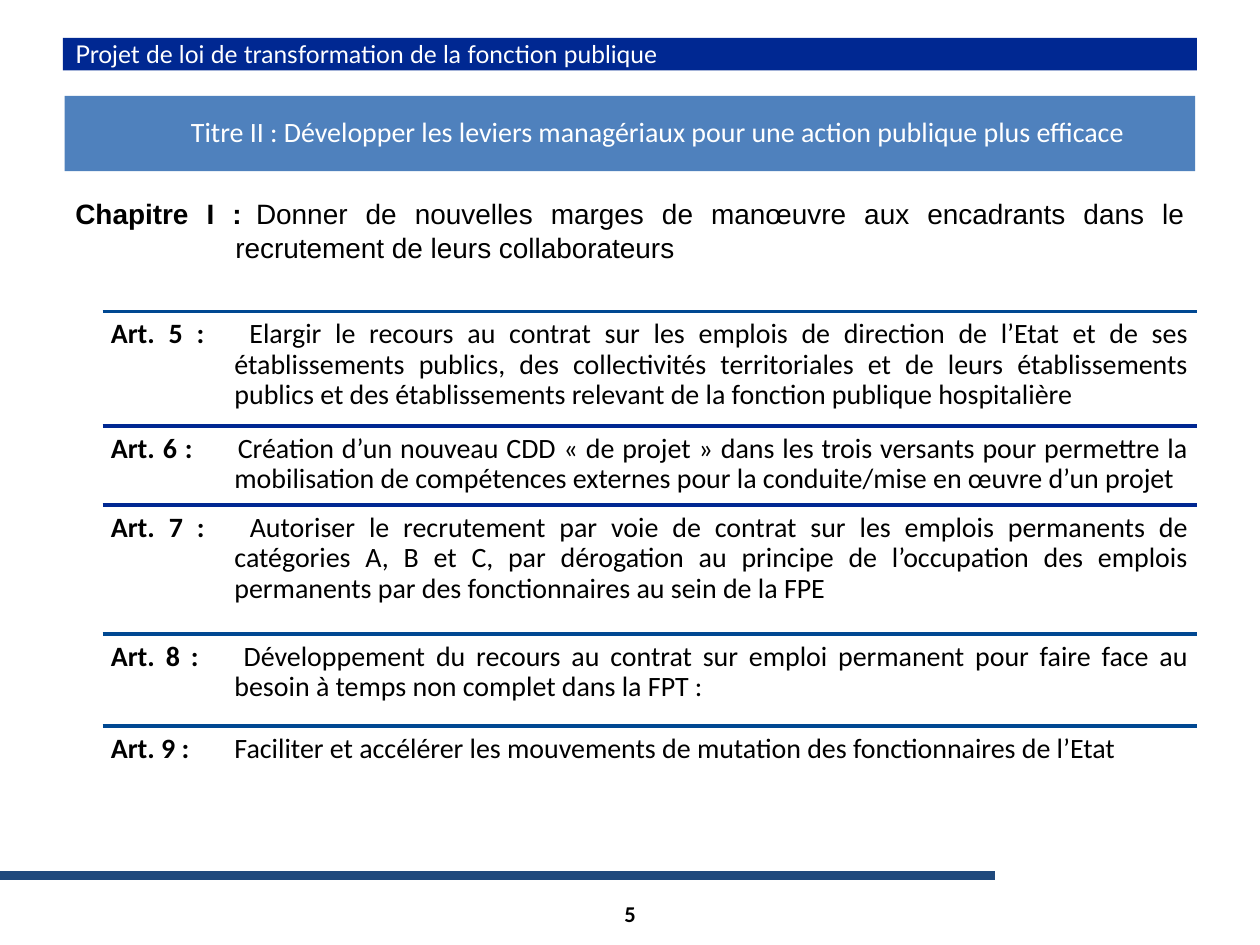
from lxml import etree
from pptx import Presentation
from pptx.dml.color import RGBColor
from pptx.enum.shapes import MSO_CONNECTOR, MSO_SHAPE
from pptx.enum.text import MSO_ANCHOR, PP_ALIGN
from pptx.oxml.ns import qn
from pptx.util import Pt

RECT = MSO_SHAPE.RECTANGLE
LINE = MSO_CONNECTOR.STRAIGHT
TOP, MIDDLE = MSO_ANCHOR.TOP, MSO_ANCHOR.MIDDLE
LEFT, CENTER, JUST = PP_ALIGN.LEFT, PP_ALIGN.CENTER, PP_ALIGN.JUSTIFY

COLORS = {"navy": "002892", "blue": "004892", "steel": "4F81BD",
          "foot": "1F497D", "white": "FFFFFF", "black": "000000"}

# Label, text, rule colour, row height
ARTICLES = [
    ("Art. 5 :", "Elargir le recours au contrat sur les emplois de direction de l’Etat "
     "et de ses établissements publics, des collectivités territoriales et de leurs "
     "établissements publics et des établissements relevant de la fonction publique "
     "hospitalière", "blue", 65.3),
    ("Art. 6 :", "Création d’un nouveau CDD « de projet » dans les trois versants pour "
     "permettre la mobilisation de compétences externes pour la conduite/mise en œuvre "
     "d’un projet", "navy", 45.4),
    ("Art. 7 :", "Autoriser le recrutement par voie de contrat sur les emplois "
     "permanents de catégories A, B et C, par dérogation au principe de l’occupation "
     "des emplois permanents par des fonctionnaires au sein de la FPE", "navy", 73.5),
    ("Art. 8 :", "Développement du recours au contrat sur emploi permanent pour faire "
     "face au besoin à temps non complet dans la FPT :", "blue", 52.6),
    ("Art. 9 :", "Faciliter et accélérer les mouvements de mutation des fonctionnaires "
     "de l’Etat", "blue", 52.6),
]


def rgb(name):
    return RGBColor.from_string(COLORS[name])


def apply(target, values):
    for name, value in values.items():
        setattr(target, name, value)


def write(shape, parts, size, font, color="black", align=LEFT, anchor=MIDDLE,
          pads=(7.2, 3.6, 7.2, 3.6), hang=0, space=1.0):
    """Fill a shape with one paragraph of (text, bold) parts."""
    frame = shape.text_frame
    sides = ("margin_left", "margin_top", "margin_right", "margin_bottom")
    apply(frame, {side: Pt(pad) for side, pad in zip(sides, pads)})
    apply(frame, {"word_wrap": True, "vertical_anchor": anchor})
    para = frame.paragraphs[0]
    if hang:
        props = para._p.get_or_add_pPr()
        props.set("marL", str(Pt(hang)))
        props.set("indent", str(Pt(-hang)))
        tabs = etree.SubElement(props, qn("a:tabLst"))
        etree.SubElement(tabs, qn("a:tab"), pos=str(Pt(hang)), algn="l")
    apply(para, {"alignment": align, "line_spacing": space})
    for text, bold in parts:
        run = para.add_run()
        run.text = text
        apply(run.font, {"size": Pt(size), "name": font, "bold": bold})
        run.font.color.rgb = rgb(color)


def add_text(slide, x, y, w, h, parts, size, font, **style):
    box = slide.shapes.add_textbox(Pt(x), Pt(y), Pt(w), Pt(h))
    write(box, parts, size, font, **style)


def add_rule(slide, x, y, w, color, width):
    rule = slide.shapes.add_connector(LINE, Pt(x), Pt(y), Pt(x + w), Pt(y))
    rule.line.color.rgb = rgb(color)
    rule.line.width = Pt(width)
    etree.SubElement(rule._element.spPr, qn("a:effectLst"))


def add_bar(slide, x, y, w, h, fill, text, size, font, **style):
    bar = slide.shapes.add_shape(RECT, Pt(x), Pt(y), Pt(w), Pt(h))
    bar.shadow.inherit = False
    bar.fill.solid()
    bar.fill.fore_color.rgb = rgb(fill)
    bar.line.fill.background()
    write(bar, [(text, False)], size, font, color="white", **style)


def add_header(slide, x, y, w):
    add_bar(slide, x, y, w, 18.7, "navy",
            "Projet de loi de transformation de la fonction publique", 14, "Lato")
    add_bar(slide, x + 1, y + 33.2, w - 2, 43, "steel",
            "Titre II : Développer les leviers managériaux pour une action publique "
            "plus efficace", 16, "Calibri", align=CENTER,
            pads=(34.6, 2.9, 2.9, 2.9), space=0.9)


def add_chapter(slide, x, y, w, h):
    add_text(slide, x, y, w, h,
             [("Chapitre I :", True),
              ("\tDonner de nouvelles marges de manœuvre aux encadrants dans le "
               "recrutement de leurs collaborateurs", False)],
             16, "Arial", align=JUST, anchor=TOP, hang=91.4)


def add_articles(slide, x, y, w):
    for label, text, color, height in ARTICLES:
        add_rule(slide, x, y, w, color, 2)
        add_text(slide, x, y, w, height, [(label, True), ("\t" + text, False)],
                 16, "Calibri", align=JUST, anchor=TOP, pads=(4.8,) * 4,
                 hang=70.6, space=0.9)
        y += height


def add_footer(slide, x, y, w):
    add_rule(slide, x, y, w, "foot", 5)
    add_text(slide, x + 276, y + 7.2, 168, 28.8, [("5", True)], 12.9, "Calibri",
             align=CENTER)


def main():
    deck = Presentation()
    apply(deck, {"slide_width": Pt(720), "slide_height": Pt(540)})
    slide = deck.slides.add_slide(deck.slide_layouts[6])
    add_footer(slide, 0, 500.4, 568.8)
    add_header(slide, 36, 21.6, 648)
    add_chapter(slide, 36, 108.9, 648, 75)
    add_articles(slide, 58.6, 178, 625.4)
    deck.save("out.pptx")


if __name__ == "__main__":
    main()
